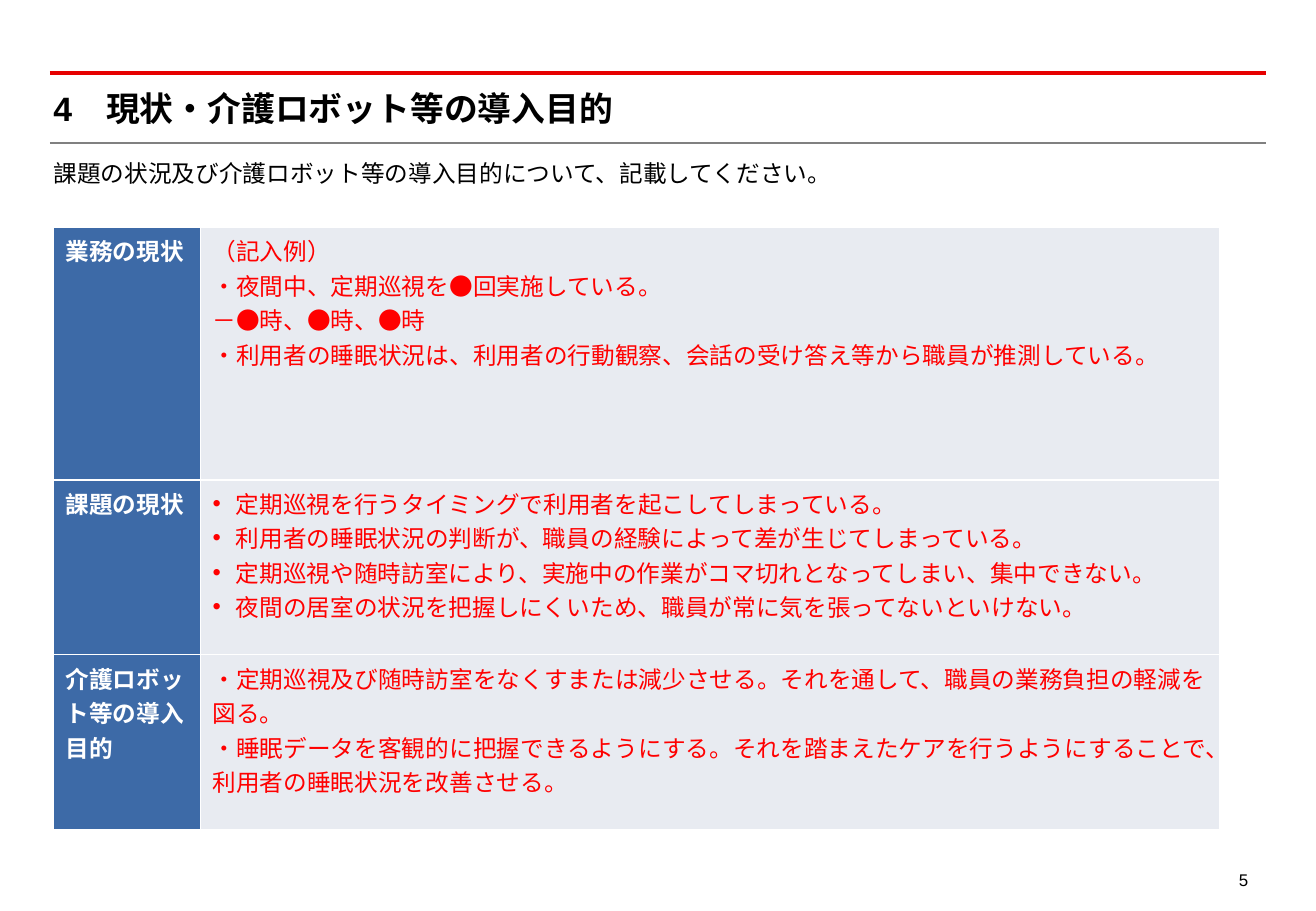
import dataclasses

import pptx
import pptx.dml.color
import pptx.enum.shapes
import pptx.enum.text
import pptx.oxml
import pptx.oxml.ns
import pptx.util


@dataclasses.dataclass(frozen=True)
class Theme:
    red: str = "E60000"
    gray: str = "808080"
    black: str = "000000"
    white: str = "FFFFFF"
    example: str = "FF0000"
    header_fill: str = "3D6AA7"
    body_fill: str = "E8EBF1"
    title_size: int = 20
    body_size: int = 14
    number_size: int = 10
    latin: str = "Arial"
    japanese: str = "Noto Sans CJK JP"


theme = Theme()
inches = pptx.util.Inches
rgb = pptx.dml.color.RGBColor.from_string
align = pptx.enum.text.PP_ALIGN
anchor = pptx.enum.text.MSO_ANCHOR


def write_text(frame, lines, size, color, font=theme.latin, bold=False,
               alignment=align.LEFT, spacing=1.0, bullet=False):
    frame.word_wrap = True
    for index, line in enumerate(lines):
        paragraph = frame.paragraphs[0] if index == 0 else frame.add_paragraph()
        paragraph.alignment = alignment
        paragraph.line_spacing = spacing
        run = paragraph.add_run()
        run.text = line
        run.font.size = pptx.util.Pt(size)
        run.font.bold = bold
        run.font.name = font
        run.font.color.rgb = rgb(color)
        east_asian = pptx.oxml.parse_xml(
            f'<a:ea {pptx.oxml.ns.nsdecls("a")} typeface="{font}"/>')
        run.font._element.find(pptx.oxml.ns.qn("a:latin")).addnext(east_asian)
        if bullet:
            properties = paragraph._p.get_or_add_pPr()
            properties.set("marL", str(inches(0.19)))
            properties.set("indent", str(-inches(0.19)))
            for markup in ('buFont {} typeface="Arial"', 'buChar {} char="•"'):
                properties.append(pptx.oxml.parse_xml(
                    "<a:" + markup.format(pptx.oxml.ns.nsdecls("a")) + "/>"))


presentation = pptx.Presentation()
presentation.slide_width = inches(10.83)
presentation.slide_height = inches(7.5)
slide = presentation.slides.add_slide(presentation.slide_layouts[6])

left = inches(0.44)
text_width = inches(9.91)

for top, color, width in [(0.6, theme.red, 2), (1.18, theme.gray, 1.25)]:
    rule = slide.shapes.add_connector(
        pptx.enum.shapes.MSO_CONNECTOR.STRAIGHT,
        inches(0.41), inches(top), inches(10.42), inches(top))
    rule.line.color.rgb = rgb(color)
    rule.line.width = pptx.util.Pt(width)
    rule._element.spPr.append(pptx.oxml.parse_xml(
        f'<a:effectLst {pptx.oxml.ns.nsdecls("a")}/>'))

title = slide.shapes.add_textbox(left, inches(0.72), text_width, inches(0.34))
instruction = slide.shapes.add_textbox(left, inches(1.26), text_width, inches(0.25))
for box in (title, instruction):
    frame = box.text_frame
    frame.margin_left = frame.margin_right = 0
    frame.margin_top = frame.margin_bottom = 0
title.text_frame.vertical_anchor = anchor.MIDDLE
write_text(title.text_frame, ["4\u3000現状・介護ロボット等の導入目的".replace("\u3000", "　")],
           theme.title_size, theme.black, bold=True)
write_text(instruction.text_frame,
           ["課題の状況及び介護ロボット等の導入目的について、記載してください。"],
           theme.body_size, theme.black, spacing=1.2)

sections = [
    ("業務の現状", 2.08, False, [
        "（記入例）",
        "・夜間中、定期巡視を●回実施している。",
        "－●時、●時、●時",
        "・利用者の睡眠状況は、利用者の行動観察、会話の受け答え等から職員が推測している。",
    ]),
    ("課題の現状", 1.44, True, [
        "定期巡視を行うタイミングで利用者を起こしてしまっている。",
        "利用者の睡眠状況の判断が、職員の経験によって差が生じてしまっている。",
        "定期巡視や随時訪室により、実施中の作業がコマ切れとなってしまい、集中できない。",
        "夜間の居室の状況を把握しにくいため、職員が常に気を張ってないといけない。",
    ]),
    ("介護ロボット等の導入目的", 1.44, False, [
        "・定期巡視及び随時訪室をなくすまたは減少させる。それを通して、職員の業務負担の軽減を図る。",
        "・睡眠データを客観的に把握できるようにする。それを踏まえたケアを行うようにすることで、利用者の睡眠状況を改善させる。",
    ]),
]
table = slide.shapes.add_table(
    len(sections), 2, left, inches(1.87), inches(9.6), inches(4.96)).table
table.columns[0].width = inches(1.21)
table.columns[1].width = inches(8.39)

for row, (heading, height, bullet, lines) in enumerate(sections):
    table.rows[row].height = inches(height)
    contents = [
        ([heading], theme.header_fill, theme.white, True, False),
        (lines, theme.body_fill, theme.example, False, bullet),
    ]
    for column, (texts, fill, color, bold, bulleted) in enumerate(contents):
        cell = table.cell(row, column)
        write_text(cell.text_frame, texts, theme.body_size, color,
                   font=theme.japanese, bold=bold, bullet=bulleted)
        properties = cell._tc.get_or_add_tcPr()
        for side in ("lnL", "lnR", "lnT", "lnB"):
            properties.append(pptx.oxml.parse_xml(
                f'<a:{side} {pptx.oxml.ns.nsdecls("a")} w="{pptx.util.Pt(1)}">'
                f'<a:solidFill><a:srgbClr val="{theme.white}"/></a:solidFill>'
                f'</a:{side}>'))
        cell.fill.solid()
        cell.fill.fore_color.rgb = rgb(fill)

page_number = slide.shapes.add_textbox(
    inches(9.93), inches(7.08), inches(0.44), inches(0.28))
write_text(page_number.text_frame, ["5"], theme.number_size, theme.black,
           alignment=align.RIGHT, spacing=1.2)

presentation.save("out.pptx")
